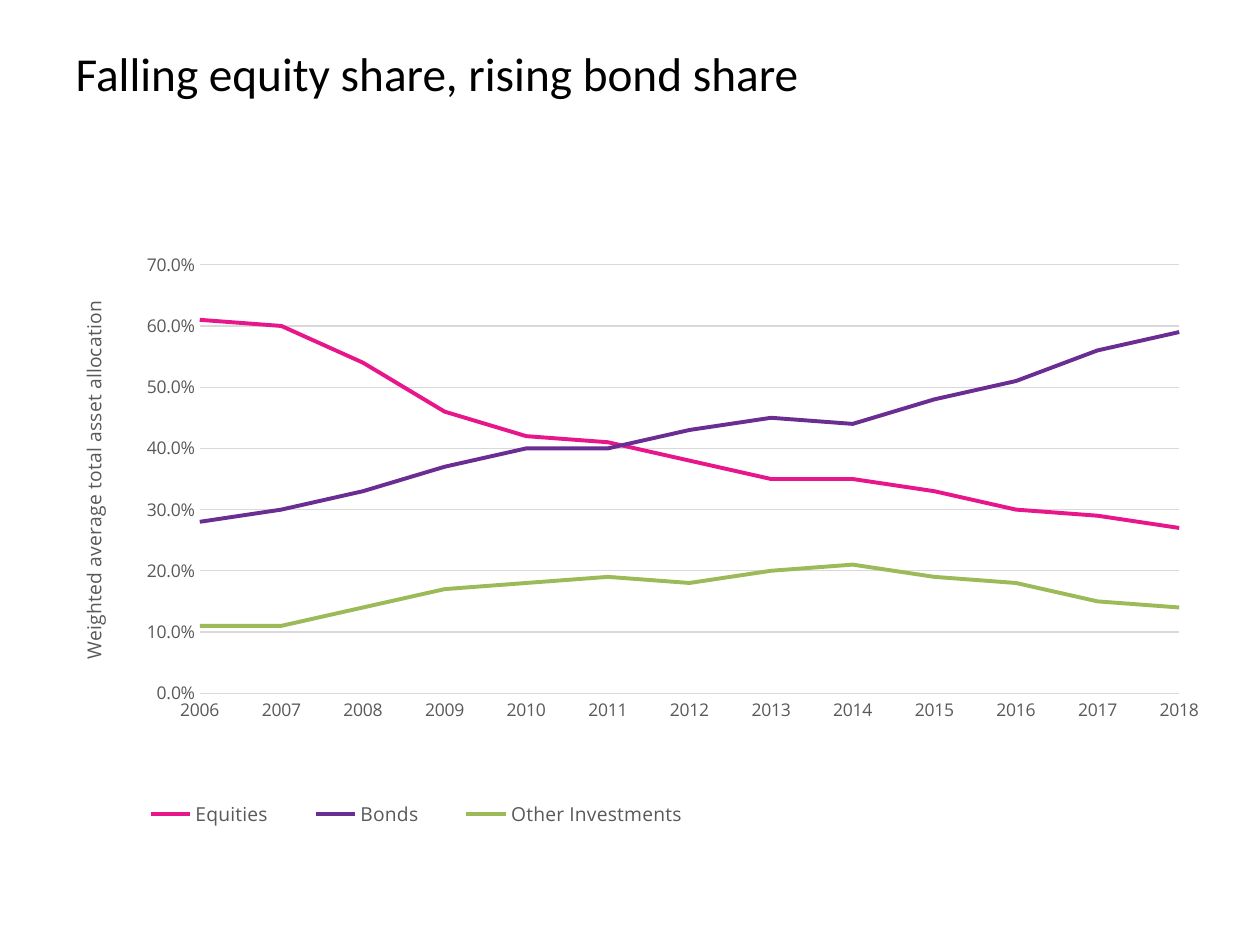
import pptx
import pptx.chart.data
import pptx.dml.color
import pptx.enum.chart
import pptx.enum.text
import pptx.oxml
import pptx.oxml.ns
import pptx.util
from pptx.util import Inches

BLACK = pptx.dml.color.RGBColor(0x00, 0x00, 0x00)
GREY = pptx.dml.color.RGBColor(0x59, 0x59, 0x59)
GRID = pptx.dml.color.RGBColor(0xD9, 0xD9, 0xD9)
PINK = pptx.dml.color.RGBColor(0xE7, 0x16, 0x8A)
PURPLE = pptx.dml.color.RGBColor(0x6A, 0x2D, 0x91)
GREEN = pptx.dml.color.RGBColor(0x9B, 0xBB, 0x59)

YEARS = [str(year) for year in range(2006, 2019)]
ALLOCATIONS = [
    ("Equities", PINK, (0.61, 0.6, 0.54, 0.46, 0.42, 0.41, 0.38,
                        0.35, 0.35, 0.33, 0.3, 0.29, 0.27)),
    ("Bonds", PURPLE, (0.28, 0.3, 0.33, 0.37, 0.4, 0.4, 0.43,
                       0.45, 0.44, 0.48, 0.51, 0.56, 0.59)),
    ("Other Investments", GREEN, (0.11, 0.11, 0.14, 0.17, 0.18, 0.19, 0.18,
                                  0.2, 0.21, 0.19, 0.18, 0.15, 0.14)),
]


def format_font(font, size, color, name="Open Sans"):
    font.size = pptx.util.Pt(size)
    font.name = name
    font.bold = False
    font.color.rgb = color


def write_text(frame, text, *, size, color, name="Open Sans", align=None):
    paragraph = frame.paragraphs[0]
    paragraph.alignment = align
    run = paragraph.add_run()
    run.text = text
    format_font(run.font, size, color, name)


def format_line(line, color, width):
    line.color.rgb = color
    line.width = pptx.util.Pt(width)


def place(element, before, x, y, w=None, h=None, inner=False):
    """Set a manual layout, in fractions of the chart, ahead of a child tag."""
    for old in element.findall(pptx.oxml.ns.qn("c:layout")):
        element.remove(old)
    target = '<c:layoutTarget val="inner"/>' if inner else ""
    modes = '<c:xMode val="edge"/><c:yMode val="edge"/>'
    lengths = "".join(f'<c:{tag} val="{value}"/>'
                      for tag, value in zip("xywh", (x, y, w, h)) if value is not None)
    layout = pptx.oxml.parse_xml(
        f'<c:layout {pptx.oxml.ns.nsdecls("c")}><c:manualLayout>'
        f'{target}{modes}{lengths}</c:manualLayout></c:layout>')
    element.find(pptx.oxml.ns.qn(before)).addprevious(layout)


def start_lines_on_axis(value_axis):
    """Let the first category sit right on the value axis."""
    axis = value_axis._element
    for old in axis.findall(pptx.oxml.ns.qn("c:crossBetween")):
        axis.remove(old)
    crossing = axis.find(pptx.oxml.ns.qn("c:crosses"))
    if crossing is None:
        crossing = axis.find(pptx.oxml.ns.qn("c:crossAx"))
    crossing.addnext(pptx.oxml.parse_xml(
        f'<c:crossBetween {pptx.oxml.ns.nsdecls("c")} val="midCat"/>'))


def add_title(slide, text):
    title = slide.shapes.title
    title.left, title.top = Inches(0.5), Inches(0.3)
    title.width, title.height = Inches(9), Inches(1.25)
    title.text_frame.vertical_anchor = pptx.enum.text.MSO_ANCHOR.TOP
    write_text(title.text_frame, text, size=27, color=BLACK, name="Calibri",
               align=pptx.enum.text.PP_ALIGN.LEFT)


def format_axes(chart):
    years, shares = chart.category_axis, chart.value_axis
    for axis in (years, shares):
        axis.major_tick_mark = pptx.enum.chart.XL_TICK_MARK.NONE
        axis.minor_tick_mark = pptx.enum.chart.XL_TICK_MARK.NONE
        format_font(axis.tick_labels.font, 10, GREY)
    format_line(years.format.line, GRID, 0.75)

    shares.minimum_scale, shares.maximum_scale, shares.major_unit = 0, 0.7, 0.1
    shares.tick_labels.number_format = "0.0%"
    shares.tick_labels.number_format_is_linked = False
    shares.format.line.fill.background()
    format_line(shares.major_gridlines.format.line, GRID, 0.75)
    start_lines_on_axis(shares)

    # Value axis title, read from bottom to top
    write_text(shares.axis_title.text_frame, "Weighted average total asset allocation",
               size=11, color=GREY)
    title = shares.axis_title._element
    body = title.find(".//" + pptx.oxml.ns.qn("a:bodyPr"))
    body.set("rot", "-5400000")
    body.set("vert", "horz")
    place(title, "c:overlay", 0.01, 0.09)


def add_allocation_chart(slide):
    allocation = pptx.chart.data.CategoryChartData(number_format="0.0%")
    allocation.categories = YEARS
    for name, _, shares in ALLOCATIONS:
        allocation.add_series(name, shares)
    chart = slide.shapes.add_chart(
        pptx.enum.chart.XL_CHART_TYPE.LINE, Inches(0.5), Inches(1.93),
        Inches(9.2), Inches(4.77), allocation).chart
    chart.has_title = False
    format_font(chart.font, 10, BLACK)
    format_axes(chart)

    # Lines
    plot = chart.plots[0]
    plot.vary_by_categories = False
    for series, (_, color, _) in zip(plot.series, ALLOCATIONS):
        series.smooth = False
        series.marker.style = pptx.enum.chart.XL_MARKER_STYLE.NONE
        format_line(series.format.line, color, 2.25)
    place(plot._element.getparent(), "c:lineChart", 0.118, 0.036, 0.845, 0.713, inner=True)

    # Legend
    chart.has_legend = True
    chart.legend.position = pptx.enum.chart.XL_LEGEND_POSITION.BOTTOM
    chart.legend.include_in_layout = False
    format_font(chart.legend.font, 11, GREY)
    place(chart.legend._element, "c:overlay", 0.04, 0.91, 0.53, 0.08)


def main():
    deck = pptx.Presentation()
    deck.slide_width, deck.slide_height = Inches(10), Inches(7.5)
    slide = deck.slides.add_slide(deck.slide_layouts[5])
    add_title(slide, "Falling equity share, rising bond share")
    add_allocation_chart(slide)
    deck.save("out.pptx")


if __name__ == "__main__":
    main()
